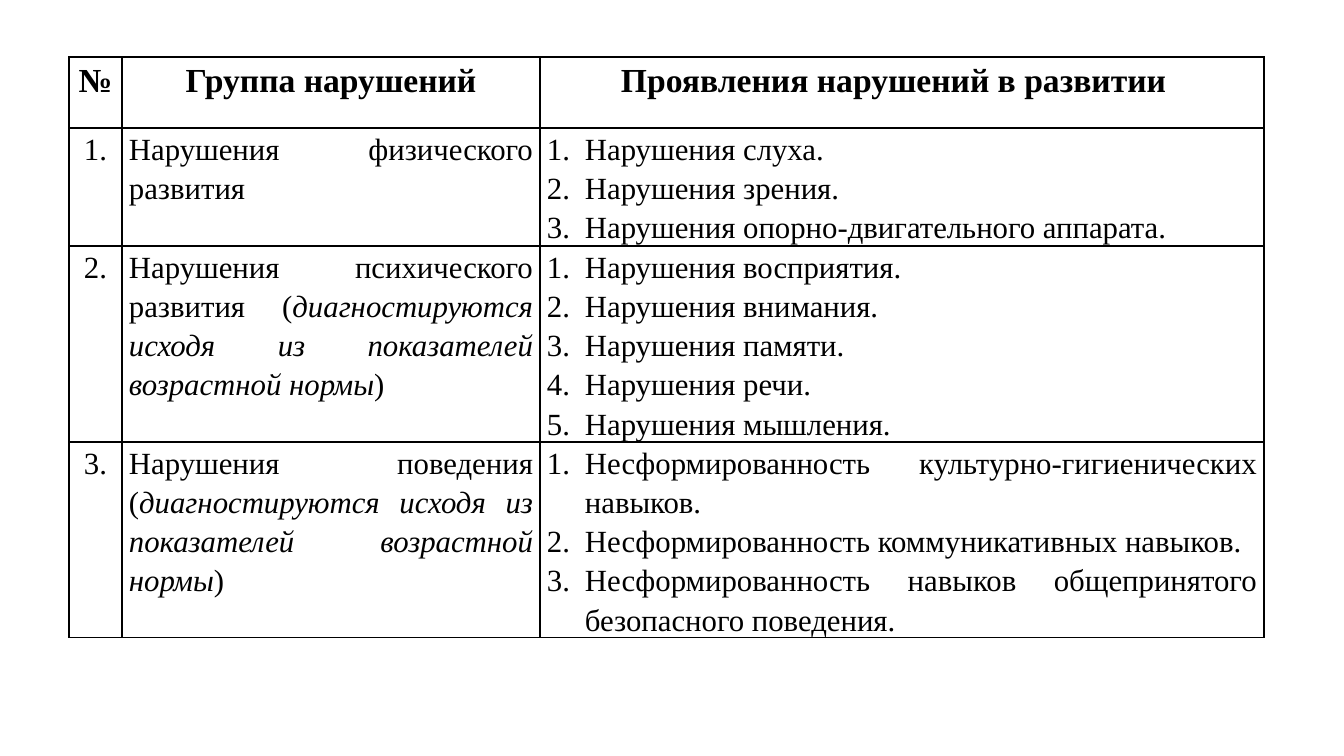
import pptx
import pptx.dml.color
import pptx.enum.text
import pptx.oxml.ns
import pptx.util
from lxml import etree

ALIGN = pptx.enum.text.PP_ALIGN
SCALE = 914400 / 100.8
CRITERIA = "диагностируются исходя из показателей возрастной нормы"
HEADINGS = ["№", "Группа нарушений", "Проявления нарушений в развитии \u00a0"]
GROUPS = [
    (
        [("Нарушения физического развития", False)],
        [
            "Нарушения слуха.",
            "Нарушения зрения.",
            "Нарушения опорно-двигательного аппарата.",
        ],
    ),
    (
        [("Нарушения психического развития (", False), (CRITERIA, True), (")", False)],
        [
            "Нарушения восприятия.",
            "Нарушения внимания.",
            "Нарушения памяти.",
            "Нарушения речи.",
            "Нарушения мышления.",
        ],
    ),
    (
        [("Нарушения поведения (", False), (CRITERIA, True), (")", False)],
        [
            "Несформированность культурно-гигиенических навыков.",
            "Несформированность коммуникативных навыков.",
            "Несформированность навыков общепринятого безопасного поведения.",
        ],
    ),
]


def px(length):
    return pptx.util.Emu(round(length * SCALE))


def color(value):
    return pptx.dml.color.RGBColor.from_string(value)


def add_element(parent, tag, **attributes):
    return etree.SubElement(parent, pptx.oxml.ns.qn(tag), attributes)


class TablePage:
    font = "Times New Roman"
    ink = "000000"
    inset = 7
    indent = 38

    def __init__(self, deck):
        self.page = deck.slides.add_slide(deck.slide_layouts[6])

    def table(self, left, top, widths, heights):
        frame = self.page.shapes.add_table(
            len(heights), len(widths),
            px(left), px(top), px(sum(widths)), px(sum(heights)),
        )
        table = frame.table
        table.first_row = False
        table.horz_banding = False
        for column, width in zip(table.columns, widths):
            column.width = px(width)
        for row, height in zip(table.rows, heights):
            row.height = px(height)
        return table

    def borders(self, cell):
        properties = cell._tc.get_or_add_tcPr()
        for index, side in enumerate(("a:lnL", "a:lnR", "a:lnT", "a:lnB")):
            line = add_element(properties, side, w=str(pptx.util.Pt(1)))
            fill = add_element(line, "a:solidFill")
            add_element(fill, "a:srgbClr", val=self.ink)
            properties.insert(index, line)

    def cell(self, cell, paragraphs, align, size=22, bold=False, numbered=False):
        cell.fill.background()
        self.borders(cell)
        cell.margin_left = cell.margin_right = px(self.inset)
        cell.margin_top = cell.margin_bottom = 0
        box = cell.text_frame
        for index, spans in enumerate(paragraphs):
            para = box.add_paragraph() if index else box.paragraphs[0]
            if numbered:
                self.number(para)
            para.alignment = align
            para.line_spacing = 1.15
            last = index == len(paragraphs) - 1
            para.space_after = pptx.util.Pt(10 if last else 0)
            for text, italic in spans:
                self.span(para, text, size, bold, italic)

    def number(self, para):
        properties = para._p.get_or_add_pPr()
        properties.set("marL", str(px(self.indent)))
        properties.set("indent", str(-px(self.indent)))
        add_element(properties, "a:buFont", typeface=self.font)
        add_element(properties, "a:buAutoNum", type="arabicPeriod")

    def span(self, para, text, size, bold, italic):
        span = para.add_run()
        span.text = text
        span.font.name = self.font
        span.font.size = pptx.util.Pt(size)
        span.font.bold = bold
        span.font.italic = italic
        span.font.color.rgb = color(self.ink)


def main():
    deck = pptx.Presentation()
    deck.slide_width, deck.slide_height = px(1344), px(756)
    page = TablePage(deck)
    table = page.table(69, 57, [53, 418, 724], [71, 118, 196, 196])
    for column, heading in enumerate(HEADINGS):
        page.cell(table.cell(0, column), [[(heading, False)]], ALIGN.CENTER, 24, True)
    for row, (group, signs) in enumerate(GROUPS, 1):
        page.cell(table.cell(row, 0), [[(f"{row}.", False)]], ALIGN.CENTER)
        page.cell(table.cell(row, 1), [group], ALIGN.JUSTIFY)
        items = [[(sign, False)] for sign in signs]
        page.cell(table.cell(row, 2), items, ALIGN.JUSTIFY, numbered=True)
    deck.save("out.pptx")


if __name__ == "__main__":
    main()
